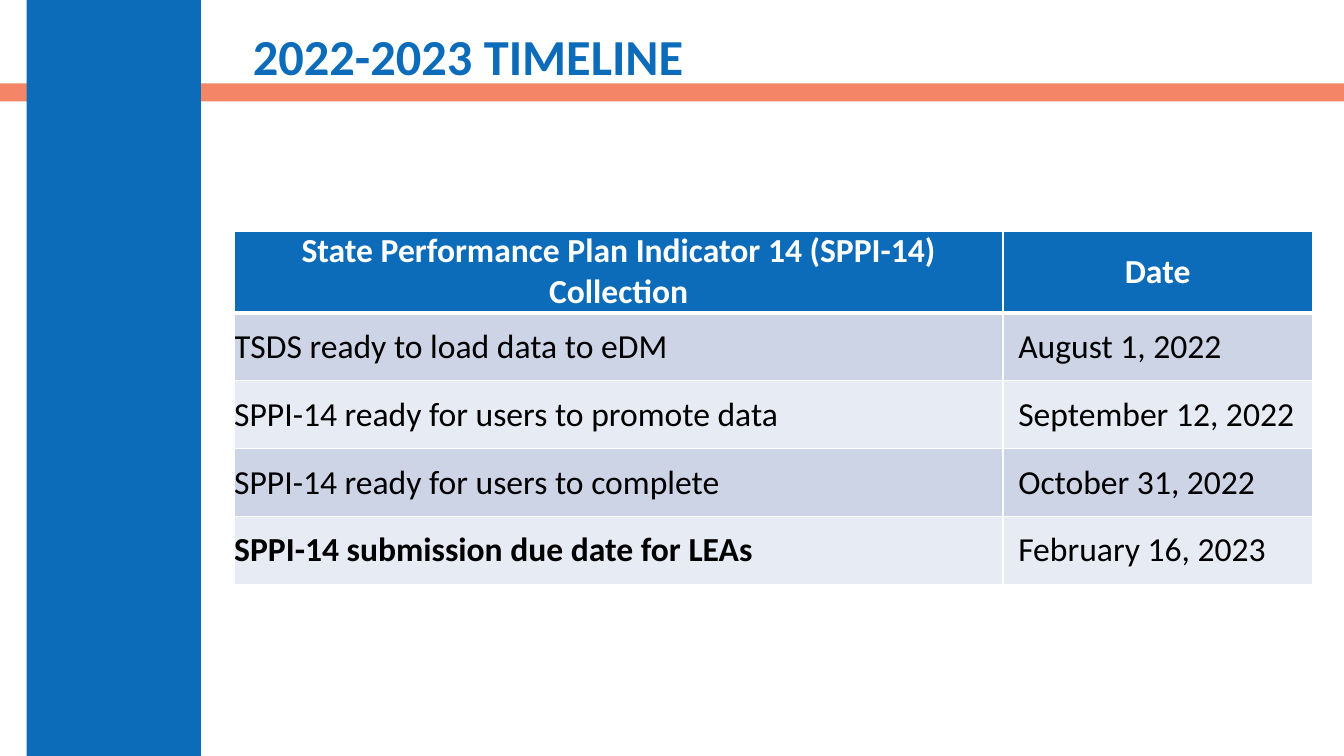
from lxml.etree import SubElement
from pptx import Presentation
from pptx.dml.color import RGBColor as RGB
from pptx.enum.shapes import MSO_SHAPE as SHAPE
from pptx.enum.text import MSO_ANCHOR as ANCHOR, PP_ALIGN as ALIGN
from pptx.oxml.ns import qn
from pptx.util import Pt

C = {"blue": "0D6CB9", "coral": "F16038", "white": "FFFFFF", "black": "000000",
     "band_dark": "CCD4E6", "band_light": "E7EBF3"}


def format_text(p, color, **values):
    values = {"name": "Calibri", **values}
    for key, value in values.items():
        setattr(p.font, key, value)
    p.font.color.rgb = RGB.from_string(C[color])


def add_border(cell, side, width):
    ln = SubElement(cell._tc.get_or_add_tcPr(), qn(f"a:ln{side}"), w=str(Pt(width)))
    fill = SubElement(ln, qn("a:solidFill"))
    SubElement(fill, qn("a:srgbClr"), val=C["white"])


prs = Presentation()
prs.slide_width, prs.slide_height = Pt(960), Pt(540)
s = prs.slides.add_slide(prs.slide_layouts[5])

bands = [("coral", 0, 59.5, 960, 13), ("blue", 19, 0, 124.6, 540)]
for color, *box in bands:
    sp = s.shapes.add_shape(SHAPE.RECTANGLE, *map(Pt, box))
    sp.shadow.inherit = False
    sp.fill.solid()
    sp.fill.fore_color.rgb = RGB.from_string(C[color])
    sp.line.fill.background()
    if color == "coral":
        clr = sp._element.spPr.find(qn("a:solidFill"))[0]
        SubElement(clr, qn("a:alpha"), val="76000")

title = s.shapes.title
s.shapes._spTree.append(title._element)
title.left, title.top, title.width, title.height = map(Pt, (173.5, 13, 758, 59))
tf = title.text_frame
tf.text = "2022-2023 TIMELINE"
tf.vertical_anchor = ANCHOR.MIDDLE
p = tf.paragraphs[0]
p.alignment = ALIGN.LEFT
p.line_spacing = 0.9
format_text(p, "blue", size=Pt(36), bold=True)

rows = [
    ("State Performance Plan Indicator 14 (SPPI-14) Collection", "Date"),
    ("TSDS ready to load data to eDM", "August 1, 2022"),
    ("SPPI-14 ready for users to promote data", "September 12, 2022"),
    ("SPPI-14 ready for users to complete", "October 31, 2022"),
    ("SPPI-14 submission due date for LEAs", "February 16, 2023"),
]
frame = s.shapes.add_table(len(rows), 2, Pt(167.3), Pt(165), Pt(770), Pt(252))
table = frame.table
for col, width in zip(table.columns, (549.2, 220.8)):
    col.width = Pt(width)

for i, row in enumerate(rows):
    header = i == 0
    table.rows[i].height = Pt(58 if header else 48.5)
    band = "blue" if header else ("band_light", "band_dark")[i % 2]
    for j, text in enumerate(row):
        cell = table.cell(i, j)
        cell.text = text
        cell.vertical_anchor = ANCHOR.MIDDLE
        for side in ("left", "right", "top", "bottom"):
            setattr(cell, f"margin_{side}", 0)
        if j == 1 and not header:
            cell.margin_left = Pt(10.9)
        for side in "LRTB":
            thick = (header and side == "B") or (i == 1 and side == "T")
            add_border(cell, side, 3 if thick else 1)
        cell.fill.solid()
        cell.fill.fore_color.rgb = RGB.from_string(C[band])
        p = cell.text_frame.paragraphs[0]
        p.alignment = ALIGN.CENTER if header else ALIGN.LEFT
        due = i == len(rows) - 1 and j == 0
        format_text(p, "white" if header else "black", size=Pt(24), bold=header or due)

prs.save("out.pptx")
